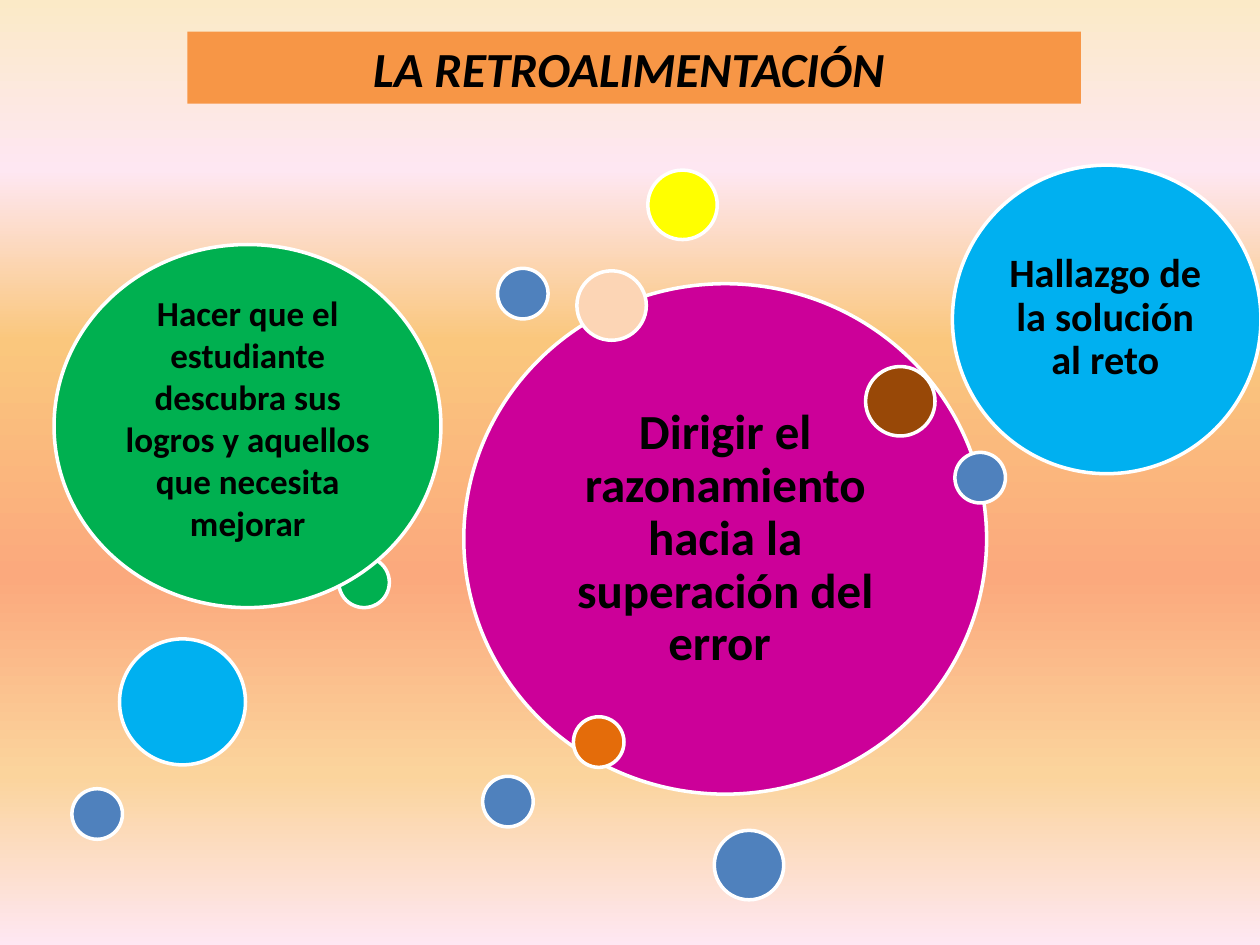
import pptx
import pptx.dml.color
import pptx.enum.shapes
import pptx.enum.text
import pptx.oxml
import pptx.oxml.ns
import pptx.util

Cm = pptx.util.Cm
Pt = pptx.util.Pt
SHAPE = pptx.enum.shapes.MSO_SHAPE
ANCHOR = pptx.enum.text.MSO_ANCHOR

BLUE, CYAN, GREEN = "4F81BD", "00B0F0", "00B050"
SMALL, MEDIUM, LARGE = 1.02, 1.4, 2.54
BACKGROUND = [(0, "FBEAC7"), (18, "FEE7F2"), (36, "FAC77D"),
              (61, "FBA97D"), (82, "FBD49C"), (100, "FEE7F2")]


def color(value):
    return pptx.dml.color.RGBColor.from_string(value)


def write(tf, text, size, italic=False, spacing=1.0, inset=0.25, anchor=ANCHOR.MIDDLE):
    tf.word_wrap = True
    tf.vertical_anchor = anchor
    tf.margin_left = tf.margin_right = tf.margin_top = tf.margin_bottom = Cm(inset)
    p = tf.paragraphs[0]
    p.alignment = pptx.enum.text.PP_ALIGN.CENTER
    p.line_spacing = spacing
    r = p.add_run()
    r.text = text
    r.font.name = "Calibri"
    r.font.size = Pt(size)
    r.font.bold = True
    r.font.italic = italic
    r.font.color.rgb = color("000000")


class Deck:
    """Holds the presentation style and the current slide."""

    def __init__(self):
        self.prs = pptx.Presentation()
        self.prs.slide_width, self.prs.slide_height = Cm(25.4), Cm(19.05)
        self.s = self.prs.slides.add_slide(self.prs.slide_layouts[6])

    def background(self, stops):
        fill = self.s.background.fill
        fill.gradient()
        fill.gradient_angle = 270
        qn = pptx.oxml.ns.qn
        gs_list = self.s.element.find(".//" + qn("a:gsLst"))
        for gs in list(gs_list):
            gs_list.remove(gs)
        for position, value in stops:
            gs_list.append(pptx.oxml.parse_xml(
                f'<a:gs {pptx.oxml.ns.nsdecls("a")} pos="{position * 1000}">'
                f'<a:srgbClr val="{value}"/></a:gs>'))

    def shape(self, kind, x, y, w, h, fill):
        sp = self.s.shapes.add_shape(kind, Cm(x), Cm(y), Cm(w), Cm(h))
        sp.shadow.inherit = False
        sp.fill.solid()
        sp.fill.fore_color.rgb = color(fill)
        return sp

    def title(self, x, y, w, h, fill, text):
        sp = self.shape(SHAPE.RECTANGLE, x, y, w, h, fill)
        sp.line.fill.background()
        write(sp.text_frame, text, 28, italic=True, inset=0.13, anchor=ANCHOR.TOP)

    def bubble(self, fill, x, y, w, h=None):
        sp = self.shape(SHAPE.OVAL, x, y, w, h or w, fill)
        sp.line.color.rgb = color("FFFFFF")
        sp.line.width = Pt(2)

    def label(self, x, y, w, h, text, size, **style):
        sp = self.s.shapes.add_textbox(Cm(x), Cm(y), Cm(w), Cm(h))
        write(sp.text_frame, text, size, **style)

    def save(self):
        self.prs.save("out.pptx")


def main():
    deck = Deck()
    deck.background(BACKGROUND)
    deck.title(3.78, 0.64, 18.01, 1.45, "F79646", "LA RETROALIMENTACIÓN ")

    deck.bubble("CC0099", 9.35, 5.72, 10.54, 10.29)
    deck.label(10.9, 7.24, 7.44, 7.26,
               "Dirigir el razonamiento hacia la superación del error ",
               28, spacing=0.9, inset=0.3)
    for fill, x, y, size in [
        ("FFFF00", 13.06, 3.43, MEDIUM),
        (BLUE, 9.73, 15.65, SMALL),
        (BLUE, 19.25, 9.12, SMALL),
        (BLUE, 14.4, 16.74, MEDIUM),
        (BLUE, 10.03, 5.41, SMALL),
        (GREEN, 6.83, 11.23, SMALL),
        ("FCD5B5", 11.63, 5.46, MEDIUM),
        (CYAN, 2.41, 12.88, LARGE),
        ("984807", 17.45, 7.39, MEDIUM),
        (BLUE, 1.45, 15.9, SMALL),
        ("E46C0A", 11.56, 14.45, SMALL),
    ]:
        deck.bubble(fill, x, y, size)

    deck.bubble(GREEN, 1.09, 4.93, 7.8, 7.32)
    deck.label(2.24, 5.84, 5.51, 5.16,
               "Hacer que el estudiante descubra sus logros y aquellos que necesita mejorar",
               20, inset=0.2)
    deck.bubble(CYAN, 19.2, 3.33, 6.22)
    deck.label(20.09, 4.22, 4.39, 4.39, "Hallazgo de la solución al reto", 23, spacing=0.9)
    deck.save()


if __name__ == "__main__":
    main()
